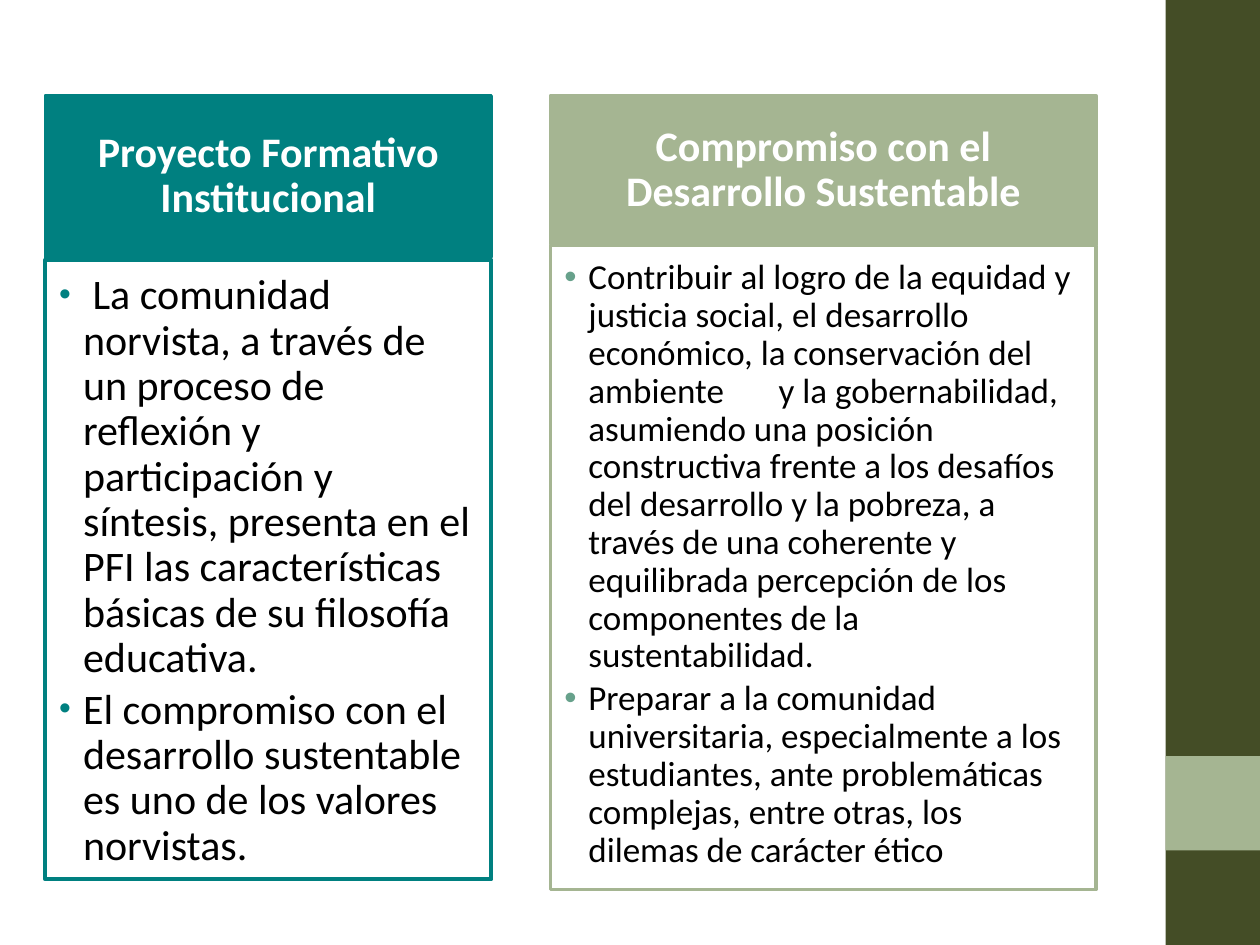
from lxml import etree
from pptx import Presentation
from pptx import util as u
from pptx.dml.color import RGBColor
from pptx.enum import shapes, text
from pptx.oxml.ns import qn

HUES = {
    "dark": "444D26", "sage": "A5B592", "teal": "008080",
    "mint": "67A18B", "white": "FFFFFF", "black": "000000",
}
WIDE, HIGH = 10, 7.5
BAR = 0.75          # width of the side bar
TOP = 0.76          # shared top of both columns
INDENT = 0.19
BODY_PAD = (0.11, 0.11, 0.15, 0.17)

# head is the heading's height; top, tall, line and size belong to the body
COLS = [
    dict(left=0.36, width=3.54, head=1.28, top=2.06, tall=4.92,
         pad=(0.25, 0.14, 0.25, 0.14), line=2.25, size=24,
         hue="teal", dot="teal", share=80,
         title="Proyecto Formativo Institucional",
         points=[
             " La comunidad norvista, a través de un proceso de reflexión y "
             "participación y síntesis, presenta en el PFI las "
             "características básicas de su filosofía educativa.",
             "El compromiso con el desarrollo sustentable es uno de los "
             "valores norvistas."]),
    dict(left=4.37, width=4.33, head=1.18, top=1.95, tall=5.11,
         pad=(0.15, 0.08, 0.15, 0.08), line=2, size=20,
         hue="sage", dot="mint", share=100,
         title="Compromiso con el Desarrollo Sustentable",
         points=[
             "Contribuir al logro de la equidad y justicia social, el "
             "desarrollo económico, la conservación del ambiente\ty la "
             "gobernabilidad, asumiendo una posición constructiva frente a "
             "los desafíos del desarrollo y la pobreza, a través de una "
             "coherente y equilibrada percepción de los componentes de la "
             "sustentabilidad.",
             "Preparar a la comunidad universitaria, especialmente a los "
             "estudiantes, ante problemáticas complejas, entre otras, los "
             "dilemas de carácter ético"]),
]


def tint(name):
    return RGBColor.from_string(HUES[name])


def add_box(slide, left, top, width, tall, fill, edge=None, line=0):
    """Plain rectangle, with an outline only when an edge hue is given."""
    box = slide.shapes.add_shape(
        shapes.MSO_SHAPE.RECTANGLE,
        *(u.Inches(n) for n in (left, top, width, tall)))
    box.shadow.inherit = False
    box.fill.solid()
    box.fill.fore_color.rgb = tint(fill)
    if edge:
        box.line.color.rgb = tint(edge)
        box.line.width = u.Pt(line)
    else:
        box.line.fill.background()
    return box


def set_frame(box, pad, anchor):
    frame = box.text_frame
    frame.word_wrap = True
    frame.vertical_anchor = anchor
    (frame.margin_left, frame.margin_top,
     frame.margin_right, frame.margin_bottom) = map(u.Inches, pad)
    return frame


def set_par(par, words, size, hue, align, after, bold=False):
    par.text = words
    par.alignment = align
    par.line_spacing = 0.9
    par.space_before = u.Pt(0)
    par.space_after = u.Pt(after)
    font = par.font
    font.name, font.size, font.bold = "Calibri", u.Pt(size), bold
    font.color.rgb = tint(hue)


def add_dot(par, hue, share):
    """Hanging bullet, plus a tab stop for the gap inside a line."""
    props = par._p.get_or_add_pPr()
    props.set("marL", str(u.Inches(INDENT)))
    props.set("indent", str(-u.Inches(INDENT)))
    last = props.find(qn("a:defRPr"))

    def put(tag, **vals):
        node = etree.Element(qn(tag), **vals)
        last.addprevious(node)
        return node

    etree.SubElement(put("a:buClr"), qn("a:srgbClr"), val=HUES[hue])
    put("a:buSzPct", val=str(share * 1000))
    put("a:buFont", typeface="Arial")
    put("a:buChar", char="•")
    if "\t" in par.text:
        etree.SubElement(put("a:tabLst"), qn("a:tab"),
                         pos=str(u.Inches(1.7)), algn="l")


def add_col(slide, col):
    left, width, hue, size = (col[k] for k in ("left", "width", "hue", "size"))
    # Heading
    head = add_box(slide, left, TOP, width, col["head"], hue, hue, 2)
    frame = set_frame(head, col["pad"], text.MSO_ANCHOR.MIDDLE)
    set_par(frame.paragraphs[0], col["title"], 24, "white",
            text.PP_ALIGN.CENTER, 0, True)
    # Bulleted body
    body = add_box(slide, left, col["top"], width, col["tall"], "white",
                   hue, col["line"])
    frame = set_frame(body, BODY_PAD, text.MSO_ANCHOR.TOP)
    for i, words in enumerate(col["points"]):
        par = frame.add_paragraph() if i else frame.paragraphs[0]
        set_par(par, words, size, "black", text.PP_ALIGN.LEFT, 0.15 * size)
        add_dot(par, col["dot"], col["share"])


def main():
    deck = Presentation()
    deck.slide_width, deck.slide_height = u.Inches(WIDE), u.Inches(HIGH)
    slide = deck.slides.add_slide(deck.slide_layouts[6])
    # Side bar with its accent square
    add_box(slide, WIDE - BAR, 0, BAR, HIGH, "dark")
    add_box(slide, WIDE - BAR, HIGH - 2 * BAR, BAR, BAR, "sage")
    for col in COLS:
        add_col(slide, col)
    deck.save("out.pptx")


if __name__ == "__main__":
    main()
